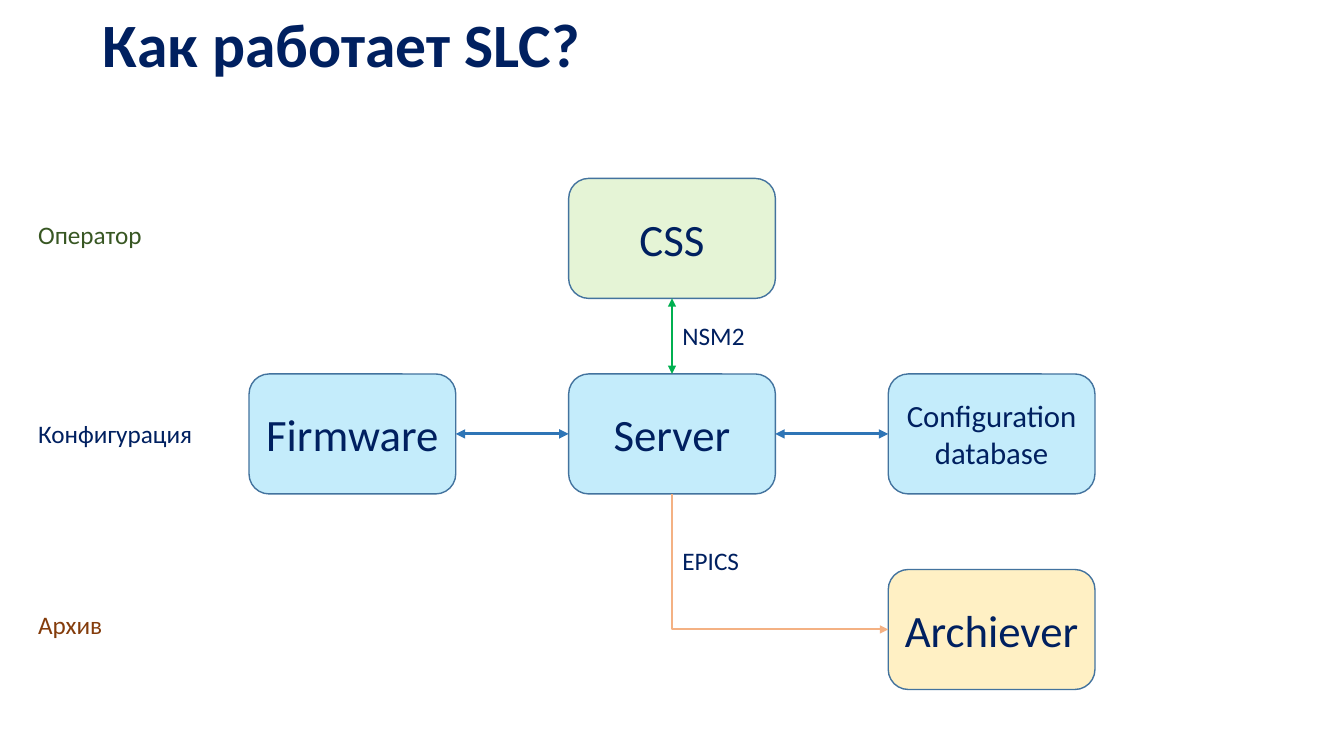
from lxml import etree
from pptx import Presentation
from pptx.dml.color import RGBColor
from pptx.enum.shapes import MSO_CONNECTOR as Link, MSO_SHAPE as Shape
from pptx.enum.text import MSO_ANCHOR as Anchor, MSO_AUTO_SIZE as Fit, PP_ALIGN as Align
from pptx.oxml.ns import qn
from pptx.util import Inches, Pt

TITLE = "Как работает SLC?"
HEX = {"navy": "002060", "edge": "43739E", "lime": "92D050", "sky": "00B0F0",
       "gold": "FFC000", "blue": "2E75B6", "green": "00B050", "peach": "F4B183",
       "moss": "385723", "rust": "843C0B"}
# name: column, row, fill, text size
BOXES = {
    "CSS": (1, 0, "lime", 32),
    "Server": (1, 1, "sky", 32),
    "Configuration database": (2, 1, "sky", 22),
    "Archiever": (2, 2, "gold", 32),
    "Firmware": (0, 1, "sky", 32),
}
# from, site, to, site, colour, width
LINKS = [
    ("Firmware", 3, "Server", 1, "blue", 2.25),
    ("Server", 3, "Configuration database", 1, "blue", 2.25),
    ("CSS", 2, "Server", 0, "green", 1.5),
]
# text, left, top, width, colour
LABELS = [
    ("NSM2", 6.67, 3.13, 0.82, "navy"),
    ("EPICS", 6.67, 5.36, 1.03, "navy"),
    ("Оператор", 0.28, 2.13, 1.86, "moss"),
    ("Конфигурация", 0.28, 4.1, 1.86, "navy"),
    ("Архив", 0.28, 6, 1.86, "rust"),
]
LEFT, TOP, STEP_X, STEP_Y = 2.47, 1.77, 3.17, 1.94
BOX_W, BOX_H = 2.05, 1.19
ALPHA = 23


def color(name):
    return RGBColor.from_string(HEX[name])


def write(shape, text, size, hue="navy", bold=False, align=Align.LEFT):
    frame = shape.text_frame
    frame.word_wrap = True
    para = frame.paragraphs[0]
    para.alignment = align
    run = para.add_run()
    run.text = text
    look = {"name": "Calibri", "size": Pt(size), "bold": bold}
    for key, value in look.items():
        setattr(run.font, key, value)
    run.font.color.rgb = color(hue)
    return frame


def add_box(name, col, row, fill, size):
    box = slide.shapes.add_shape(
        Shape.ROUNDED_RECTANGLE, Inches(LEFT + col * STEP_X),
        Inches(TOP + row * STEP_Y), Inches(BOX_W), Inches(BOX_H))
    box.shadow.inherit = False
    box.fill.solid()
    box.fill.fore_color.rgb = color(fill)
    tint = next(box.fill._xPr.iter(qn("a:srgbClr")))
    etree.SubElement(tint, qn("a:alpha"), val=str(ALPHA * 1000))
    box.line.color.rgb = color("edge")
    box.line.width = Pt(1)
    write(box, name, size, align=Align.CENTER).vertical_anchor = Anchor.MIDDLE
    return box


def join(kind, start, out, end, into, hue, width, ends):
    link = slide.shapes.add_connector(kind, 0, 0, 0, 0)
    link.begin_connect(boxes[start], out)
    link.end_connect(boxes[end], into)
    link.line.color.rgb = color(hue)
    link.line.width = Pt(width)
    for tip in ends:
        etree.SubElement(link.line._get_or_add_ln(), qn(f"a:{tip}End"), type="triangle")
    etree.SubElement(link._element.spPr, qn("a:effectLst"))
    return link


def bend(link):
    """Turn an elbow so that it runs down first, then right."""
    wide, high = link.width, link.height
    link.left += (wide - high) // 2
    link.top += (high - wide) // 2
    link.width, link.height = high, wide
    frame = link._element.spPr.find(qn("a:xfrm"))
    frame.set("rot", str(270 * 60000))
    frame.set("flipH", "1")
    link._element.spPr.find(qn("a:prstGeom")).set("prst", "bentConnector2")


deck = Presentation()
deck.slide_width, deck.slide_height = Inches(13.33), Inches(7.5)
slide = deck.slides.add_slide(deck.slide_layouts[5])

title = slide.shapes.title
place = {"left": 0.92, "top": 0, "width": 11.5, "height": 0.95}
for key, value in place.items():
    setattr(title, key, Inches(value))
head = write(title, TITLE, 44, bold=True)
head.vertical_anchor = Anchor.MIDDLE
head.auto_size = Fit.NONE
head.paragraphs[0].line_spacing = 0.9

boxes = {name: add_box(name, *spec) for name, spec in BOXES.items()}
for link in LINKS:
    join(Link.STRAIGHT, *link, ("head", "tail"))
bend(join(Link.ELBOW, "Server", 2, "Archiever", 1, "peach", 1.5, ("tail",)))

for text, left, top, width, hue in LABELS:
    label = slide.shapes.add_textbox(
        Inches(left), Inches(top), Inches(width), Inches(0.4))
    write(label, text, 18, hue).auto_size = Fit.SHAPE_TO_FIT_TEXT

deck.save("out.pptx")
